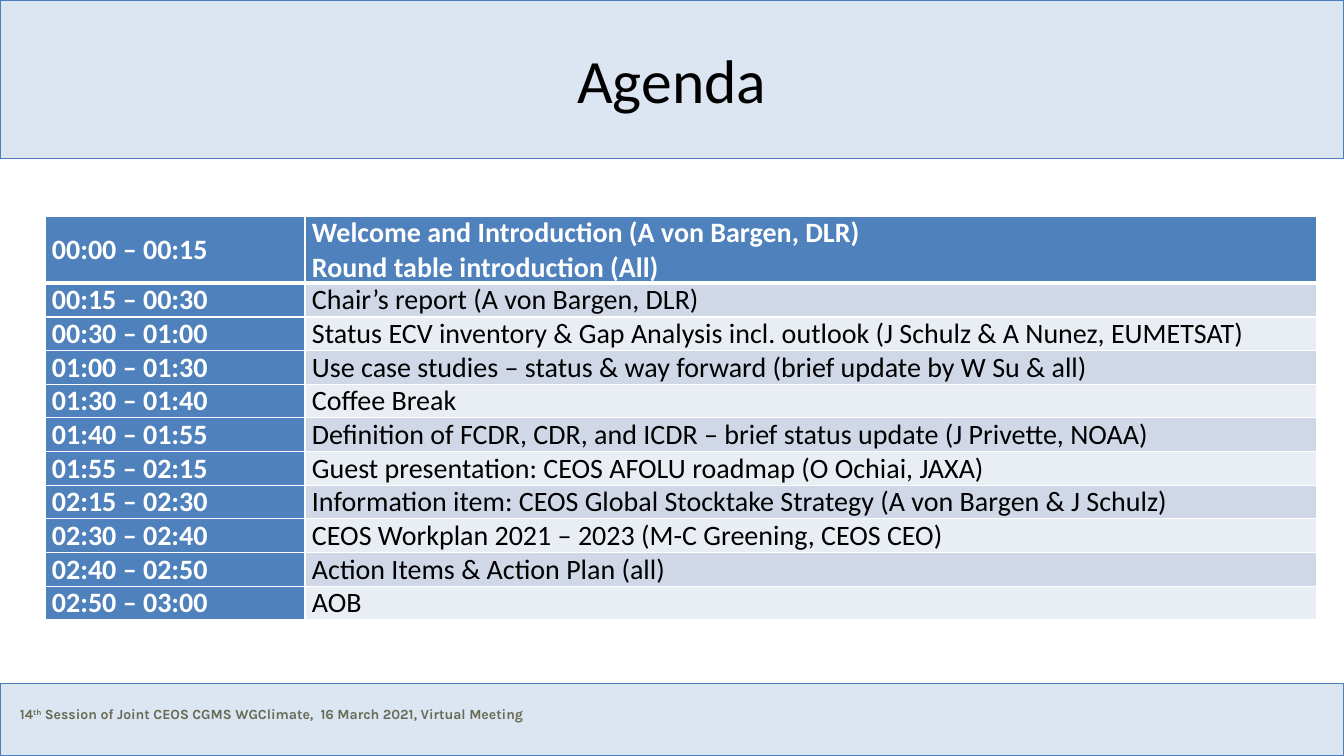
import pptx
import pptx.util
import pptx.dml.color
import pptx.enum.shapes
import pptx.enum.text
import pptx.oxml.ns
import lxml.etree
from dataclasses import dataclass

ALIGN = pptx.enum.text.PP_ALIGN
MIDDLE = pptx.enum.text.MSO_ANCHOR.MIDDLE
SCALE = 914400 / 100.8


@dataclass(frozen=True)
class Theme:
    band: str = "DCE6F2"
    edge: str = "4B7EBC"
    head: str = "4F81BD"
    odd: str = "D0D8E8"
    even: str = "E9EDF4"
    white: str = "FFFFFF"
    black: str = "000000"
    olive: str = "676A55"
    sans: str = "Calibri"
    foot: str = "Karla"
    title_size: int = 44
    body_size: int = 20
    foot_size: int = 10


THEME = Theme()

AGENDA = [
    ("00:00 – 00:15", "Welcome and Introduction (A von Bargen, DLR)\nRound table introduction (All)"),
    ("00:15 – 00:30", "Chair’s report (A von Bargen, DLR)"),
    ("00:30 – 01:00", "Status ECV inventory & Gap Analysis incl. outlook (J Schulz & A Nunez, EUMETSAT)"),
    ("01:00 – 01:30", "Use case studies – status & way forward (brief update by W Su & all)"),
    ("01:30 – 01:40", "Coffee Break"),
    ("01:40 – 01:55", "Definition of FCDR, CDR, and ICDR – brief status update (J Privette, NOAA)"),
    ("01:55 – 02:15", "Guest presentation: CEOS AFOLU roadmap (O Ochiai, JAXA)"),
    ("02:15 – 02:30", "Information item: CEOS Global Stocktake Strategy (A von Bargen & J Schulz)"),
    ("02:30 – 02:40", "CEOS Workplan 2021 – 2023 (M-C Greening, CEOS CEO)"),
    ("02:40 – 02:50", "Action Items & Action Plan (all)"),
    ("02:50 – 03:00", "AOB"),
]


def px(count):
    return pptx.util.Emu(round(count * SCALE))


def paint(fill, color):
    fill.solid()
    fill.fore_color.rgb = pptx.dml.color.RGBColor.from_string(color)


def style(frame, face, size, color, bold=False, align=ALIGN.LEFT):
    for para in frame.paragraphs:
        para.alignment = align
        for run in para.runs:
            run.font.name = face
            run.font.size = pptx.util.Pt(size)
            run.font.bold = bold
            run.font.color.rgb = pptx.dml.color.RGBColor.from_string(color)


def add_band(slide, top, height):
    kind = pptx.enum.shapes.MSO_SHAPE.RECTANGLE
    band = slide.shapes.add_shape(kind, 0, px(top), px(1344), px(height))
    band.shadow.inherit = False
    paint(band.fill, THEME.band)
    paint(band.line.fill, THEME.edge)
    band.line.width = pptx.util.Pt(0.75)


def add_label(slide, left, top, width, height):
    frame = slide.shapes.add_textbox(px(left), px(top), px(width), px(height)).text_frame
    frame.word_wrap = True
    return frame


def add_title(slide):
    frame = add_label(slide, 213, 16, 918, 126)
    frame.vertical_anchor = MIDDLE
    frame.text = "Agenda"
    style(frame, THEME.sans, THEME.title_size, THEME.black, align=ALIGN.CENTER)


def add_footer(slide):
    frame = add_label(slide, 10, 701, 1073, 27)
    frame.auto_size = pptx.enum.text.MSO_AUTO_SIZE.SHAPE_TO_FIT_TEXT
    para = frame.paragraphs[0]
    para.text = "14"
    raised = para.add_run()
    raised.text = "th"
    rest = para.add_run()
    rest.text = " Session of Joint CEOS CGMS WGClimate,  16 March 2021, Virtual Meeting"
    style(frame, THEME.foot, THEME.foot_size, THEME.olive, bold=True)
    raised.font._element.set("baseline", "30000")


def add_rules(cell, widths):
    name = pptx.oxml.ns.qn
    props = cell._tc.get_or_add_tcPr()
    for side, width in zip("LRTB", widths):
        line = lxml.etree.SubElement(props, name(f"a:ln{side}"), w=str(pptx.util.Pt(width)))
        solid = lxml.etree.SubElement(line, name("a:solidFill"))
        lxml.etree.SubElement(solid, name("a:srgbClr"), val=THEME.white)


def set_cell(cell, text, row, col):
    head = row == 0 or col == 0
    cell.margin_left = cell.margin_right = px(7)
    cell.margin_top = cell.margin_bottom = 0
    cell.vertical_anchor = MIDDLE
    add_rules(cell, (1, 1, 3 if row == 1 else 1, 3 if row == 0 else 1))
    paint(cell.fill, THEME.head if head else THEME.odd if row % 2 else THEME.even)
    cell.text_frame.text = text
    color = THEME.white if head else THEME.black
    style(cell.text_frame, THEME.sans, THEME.body_size, color, head, ALIGN.JUSTIFY)


def add_agenda(slide):
    shape = slide.shapes.add_table(len(AGENDA), 2, px(45), px(216), px(1272), px(403))
    table = shape.table
    for col, width in enumerate((260, 1012)):
        table.columns[col].width = px(width)
    for row, entry in enumerate(AGENDA):
        table.rows[row].height = px(33 if row else 67)
        for col, text in enumerate(entry):
            set_cell(table.cell(row, col), text, row, col)


def main():
    deck = pptx.Presentation()
    deck.slide_width, deck.slide_height = px(1344), px(756)
    slide = deck.slides.add_slide(deck.slide_layouts[6])
    add_band(slide, 684, 72)
    add_band(slide, 0, 159)
    add_footer(slide)
    add_agenda(slide)
    add_title(slide)
    deck.save("out.pptx")


if __name__ == "__main__":
    main()
